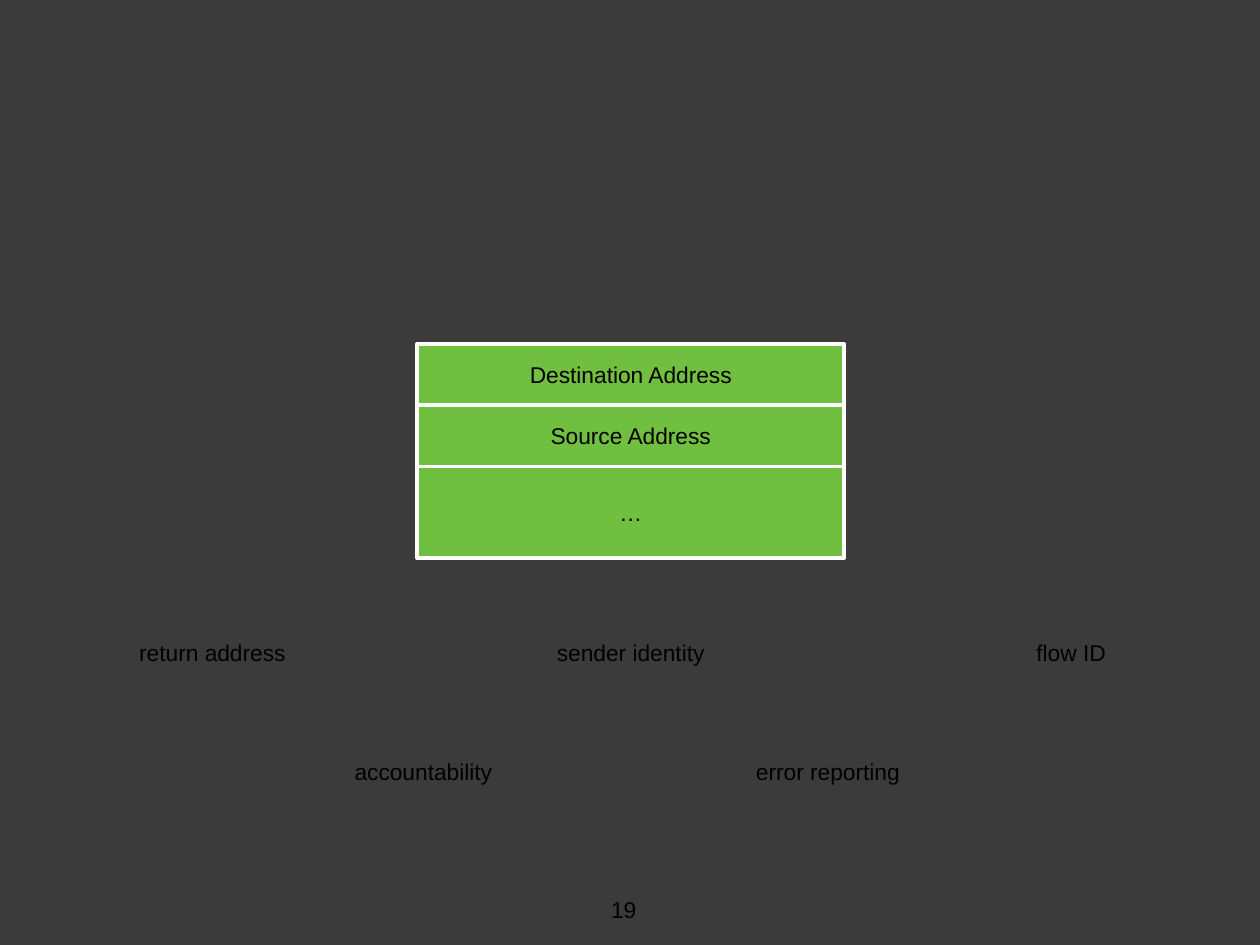
from pptx import Presentation
from pptx.dml.color import RGBColor
from pptx.enum import shapes, text
from pptx.util import Inches, Pt

DARK = RGBColor(0x3B, 0x3B, 0x3B)
GREEN = RGBColor(0x70, 0xBF, 0x41)
WHITE = RGBColor(0xFF, 0xFF, 0xFF)
BLACK = RGBColor(0, 0, 0)


def write(shape, words, align=text.PP_ALIGN.CENTER,
          anchor=text.MSO_ANCHOR.MIDDLE, inset=0, wrap=True):
    frame = shape.text_frame
    frame.word_wrap = wrap
    frame.vertical_anchor = anchor
    frame.margin_left = frame.margin_right = Inches(inset)
    frame.margin_top = frame.margin_bottom = Inches(inset)
    para = frame.paragraphs[0]
    para.alignment = align
    run = para.add_run()
    run.text = words
    run.font.name = "Arial"
    run.font.size = Pt(13)
    run.font.color.rgb = BLACK


def add_header(slide, left, top, width, height):
    fields = [("Destination Address", 2), ("Source Address", 2), ("…", 3)]
    unit = height / sum(share for _, share in fields)
    for name, share in fields:
        tall = unit * share
        cell = slide.shapes.add_shape(
            shapes.MSO_SHAPE.RECTANGLE,
            Inches(left), Inches(top), Inches(width), Inches(tall))
        cell.shadow.inherit = False
        cell.fill.solid()
        cell.fill.fore_color.rgb = GREEN
        cell.line.color.rgb = WHITE
        cell.line.width = Pt(2)
        write(cell, name)
        top += tall


def add_uses(slide, left, top, width, height):
    tall = 0.3
    rows = [
        (top, [("return address", 0, 1.25), ("sender identity", 3.3, 1.29),
               ("flow ID", width - 0.66, 0.66)]),
        (top + height - tall, [("accountability", 1.7, 1.2),
                               ("error reporting", 4.87, 1.28)]),
    ]
    for y, labels in rows:
        for name, x, wide in labels:
            label = slide.shapes.add_textbox(
                Inches(left + x), Inches(y), Inches(wide), Inches(tall))
            write(label, name, inset=0.04, wrap=False)
            label.text_frame.auto_size = text.MSO_AUTO_SIZE.SHAPE_TO_FIT_TEXT


def add_number(slide, left, top, width, height):
    box = slide.shapes.add_textbox(
        Inches(left), Inches(top), Inches(width), Inches(height))
    write(box, "19", align=text.PP_ALIGN.LEFT, anchor=text.MSO_ANCHOR.TOP)


def main():
    deck = Presentation()
    deck.slide_width = Inches(10)
    deck.slide_height = Inches(7.5)
    slide = deck.slides.add_slide(deck.slide_layouts[6])
    slide.background.fill.solid()
    slide.background.fill.fore_color.rgb = DARK
    add_header(slide, 3.31, 2.73, 3.39, 1.7)
    add_uses(slide, 1.06, 5.03, 7.77, 1.24)
    add_number(slide, 4.85, 7.11, 0.28, 0.29)
    deck.save("out.pptx")


if __name__ == "__main__":
    main()
